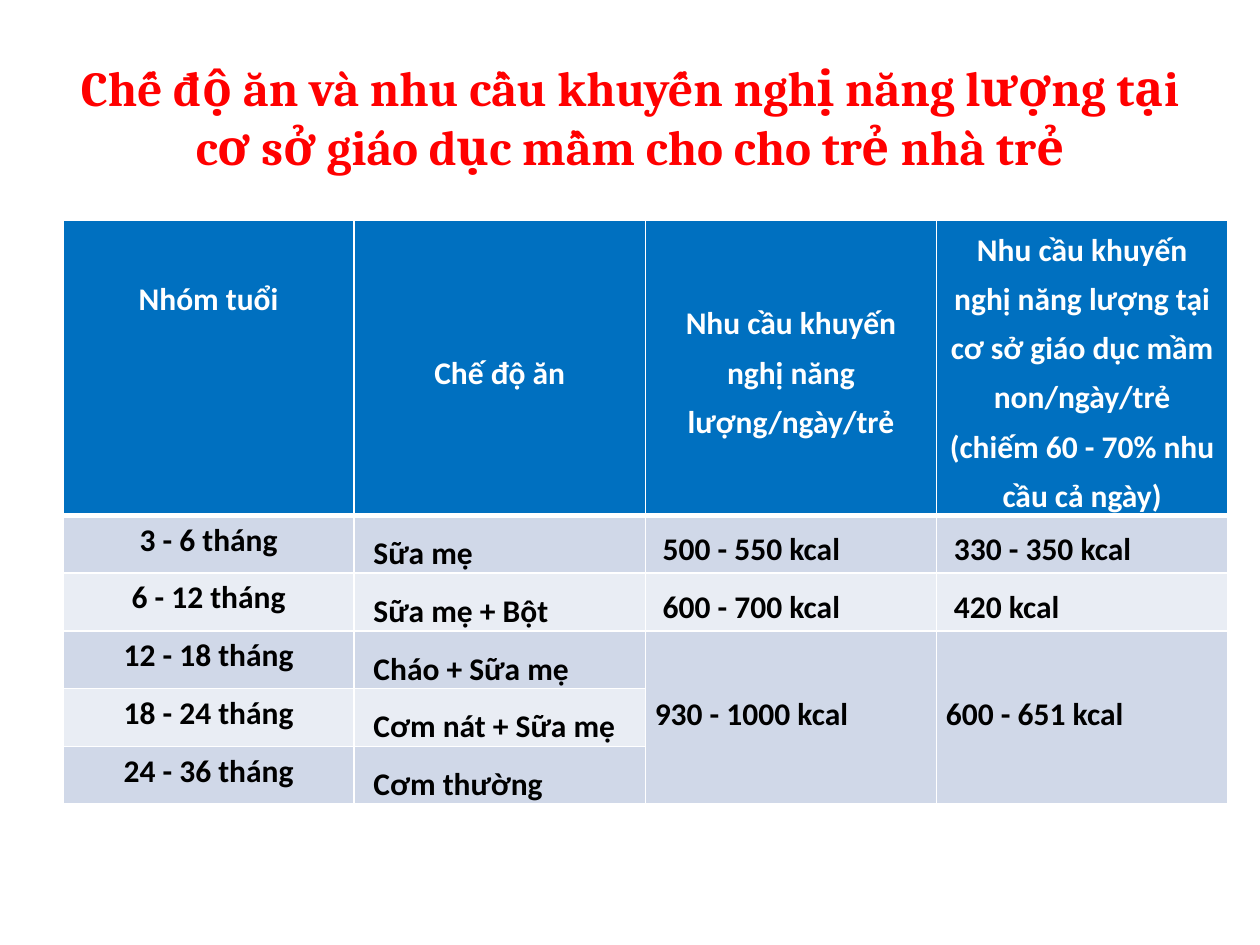
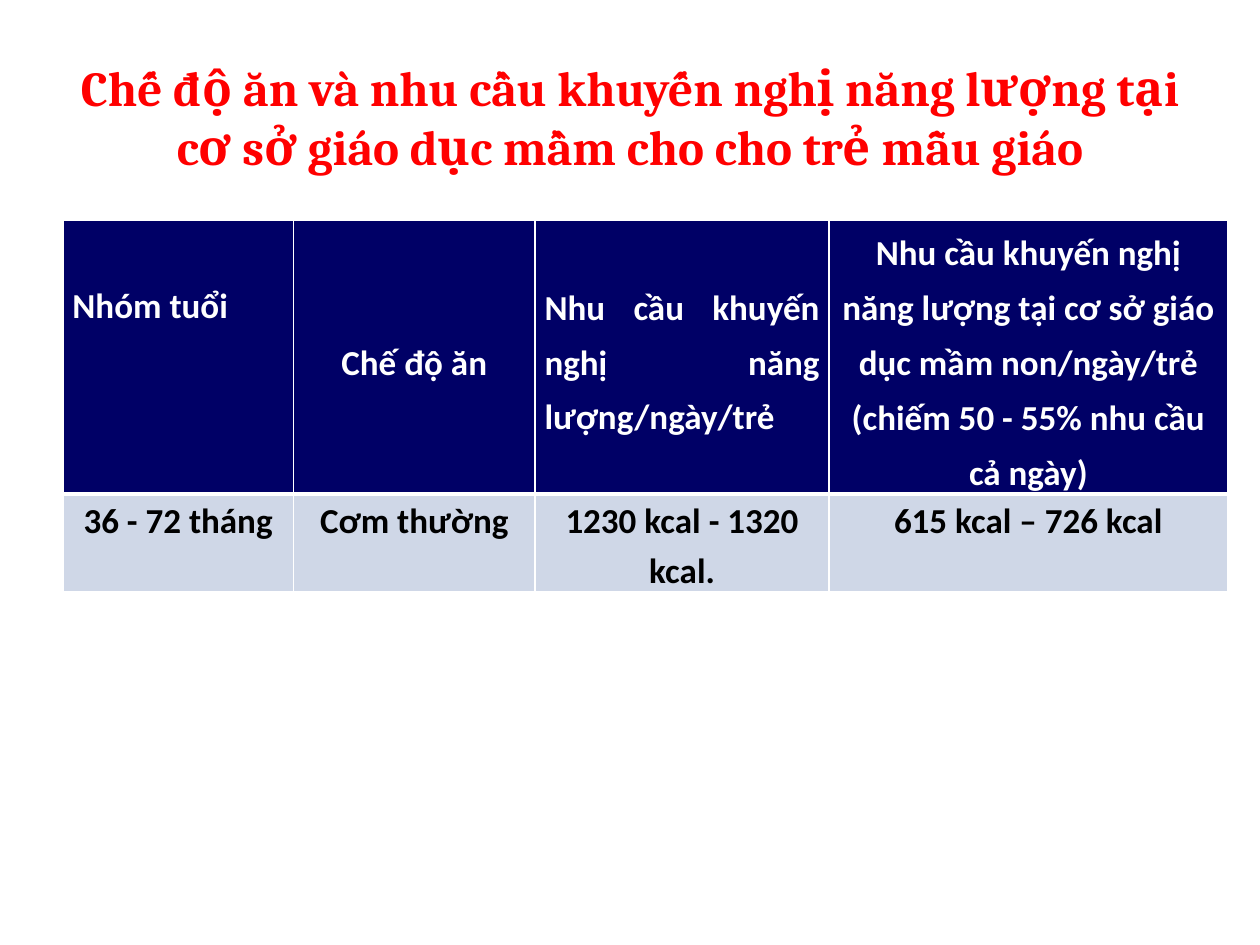
from lxml.etree import SubElement
from pptx import Presentation
from pptx.dml.color import RGBColor
from pptx.enum.text import MSO_ANCHOR, PP_ALIGN
from pptx.oxml.ns import qn
from pptx.util import Pt

COLORS = {
    "title": "FF0000",
    "white": "FFFFFF",
    "black": "000000",
    "blue": "0070C0",
    "navy": "000066",
    "band": "D0D8E8",
    "light": "E9EDF4",
    "plain": "CFD7E7",
}
TOP, MIDDLE = MSO_ANCHOR.TOP, MSO_ANCHOR.MIDDLE
LEFT, CENTER, JUSTIFY = PP_ALIGN.LEFT, PP_ALIGN.CENTER, PP_ALIGN.JUSTIFY

# style: alignment, line spacing, anchor, left indent, starts one line down
STYLES = {
    "head_age": (CENTER, 1.15, TOP, 0, True),
    "head_age_left": (LEFT, 1.15, TOP, 0, True),
    "head": (CENTER, 1.28, MIDDLE, 0, False),
    "head_justified": (JUSTIFY, 1.28, MIDDLE, 0, False),
    "centered": (CENTER, 1.15, TOP, 0, False),
    "diet": (JUSTIFY, 1.5, MIDDLE, 5.65, False),
    "energy": (JUSTIFY, 1.28, MIDDLE, 4.5, False),
    "energy_merged": (JUSTIFY, 1.28, TOP, 0, True),
}
TITLE = "Chế độ ăn và nhu cầu khuyến nghị năng lượng tại cơ sở giáo dục mầm cho cho trẻ "
HEADINGS = (
    "Nhóm tuổi",
    "Chế độ ăn",
    "Nhu cầu khuyến nghị năng lượng/ngày/trẻ",
    "Nhu cầu khuyến nghị năng lượng tại cơ sở giáo dục mầm non/ngày/trẻ (chiếm {} nhu cầu cả ngày)",
)
NURSERY_ROWS = [
    ("3 - 6 tháng", "Sữa mẹ", "500 - 550 kcal", "330 - 350 kcal"),
    ("6 - 12 tháng", "Sữa mẹ + Bột", "600 - 700 kcal", "420 kcal"),
    ("12 - 18 tháng", "Cháo + Sữa mẹ", "930 - 1000 kcal", "600 - 651 kcal"),
    ("18 - 24 tháng", "Cơm nát + Sữa mẹ", "", ""),
    ("24 - 36 tháng", "Cơm thường", "", ""),
]
KINDERGARTEN_ROWS = [
    ("36 - 72 tháng", "Cơm thường", "1230 kcal - 1320 kcal.", "615 kcal – 726 kcal"),
]


def rgb(name):
    """Return the named colour."""
    return RGBColor.from_string(COLORS[name])


def add_run(p, text, font, size, color):
    """Add one bold run to a paragraph."""
    r = p.add_run()
    r.text = text
    r.font.name, r.font.size, r.font.bold = font, Pt(size), True
    r.font.color.rgb = rgb(color)


def add_title(s, group):
    """Add the red title that ends with the group of children."""
    sp = s.shapes.add_textbox(Pt(36), Pt(21.6), Pt(648), Pt(90))
    tf = sp.text_frame
    tf.word_wrap = True
    tf.vertical_anchor = MIDDLE
    p = tf.paragraphs[0]
    p.alignment = CENTER
    add_run(p, TITLE + group, "Cambria", 28, "title")


def set_borders(cell, top, bottom):
    """Draw white cell borders with the given top and bottom widths."""
    tcPr = cell._tc.get_or_add_tcPr()
    for side, width in (("L", 1), ("R", 1), ("T", top), ("B", bottom)):
        ln = SubElement(tcPr, qn("a:ln" + side), w=str(Pt(width)))
        fill = SubElement(ln, qn("a:solidFill"))
        SubElement(fill, qn("a:srgbClr"), val=COLORS["white"])


def write_cell(cell, text, style, size, color):
    """Write the text of a cell in the named style."""
    align, spacing, anchor, indent, line_down = STYLES[style]
    cell.margin_left = cell.margin_right = Pt(5.4)
    cell.margin_top = Pt(size * 1.22 + 9 if line_down else 0)
    cell.margin_bottom = 0
    cell.vertical_anchor = anchor
    p = cell.text_frame.paragraphs[0]
    p.alignment, p.line_spacing = align, spacing
    p._p.get_or_add_pPr().set("marL", str(Pt(indent)))
    add_run(p, text, "Calibri", size, color)


def add_energy_table(s, widths, heights, share, rows, head_styles, body_styles, fills, size):
    """Add a table of energy needs and return it."""
    data = [[h.format(share) for h in HEADINGS], *rows]
    head_height, row_height = heights
    shape = s.shapes.add_table(len(data), len(widths), Pt(36), Pt(126), Pt(sum(widths)),
                               Pt(head_height + row_height * len(rows)))
    table = shape.table
    for column, width in zip(table.columns, widths):
        column.width = Pt(width)
    for i, texts in enumerate(data):
        table.rows[i].height = Pt(row_height if i else head_height)
        styles = body_styles if i else head_styles
        fill = fills[1 + (i - 1) % (len(fills) - 1)] if i else fills[0]
        for j, (text, style) in enumerate(zip(texts, styles)):
            cell = table.cell(i, j)
            set_borders(cell, 3 if i == 1 else 1, 1 if i else 3)
            cell.fill.solid()
            cell.fill.fore_color.rgb = rgb(fill)
            if text:
                write_cell(cell, text, style, size, "black" if i else "white")
    return table


def merge_energy(table, first, last):
    """Merge the two energy columns over the given rows."""
    for j in (2, 3):
        cell = table.cell(first, j)
        text = cell.text_frame.text
        cell.merge(table.cell(last, j))
        cell.text_frame.clear()
        write_cell(cell, text, "energy_merged", 18, "black")


def main():
    """Build both slides and save them."""
    prs = Presentation()
    prs.slide_width, prs.slide_height = Pt(720), Pt(540)
    blank = prs.slide_layouts[6]

    s = prs.slides.add_slide(blank)
    add_title(s, "nhà trẻ")
    table = add_energy_table(
        s, [166.4] * 4, (168.5, 33), "60 - 70%", NURSERY_ROWS,
        ["head_age", "head", "head", "head"],
        ["centered", "diet", "energy", "energy"],
        ["blue", "band", "light"], 18)
    merge_energy(table, 3, 5)

    s = prs.slides.add_slide(blank)
    add_title(s, "mẫu giáo")
    add_energy_table(
        s, [131.8, 138, 168, 227.8], (156.3, 56), "50 - 55%", KINDERGARTEN_ROWS,
        ["head_age_left", "head", "head_justified", "head"],
        ["centered"] * 4, ["navy", "plain"], 20)

    prs.save("out.pptx")


if __name__ == "__main__":
    main()
